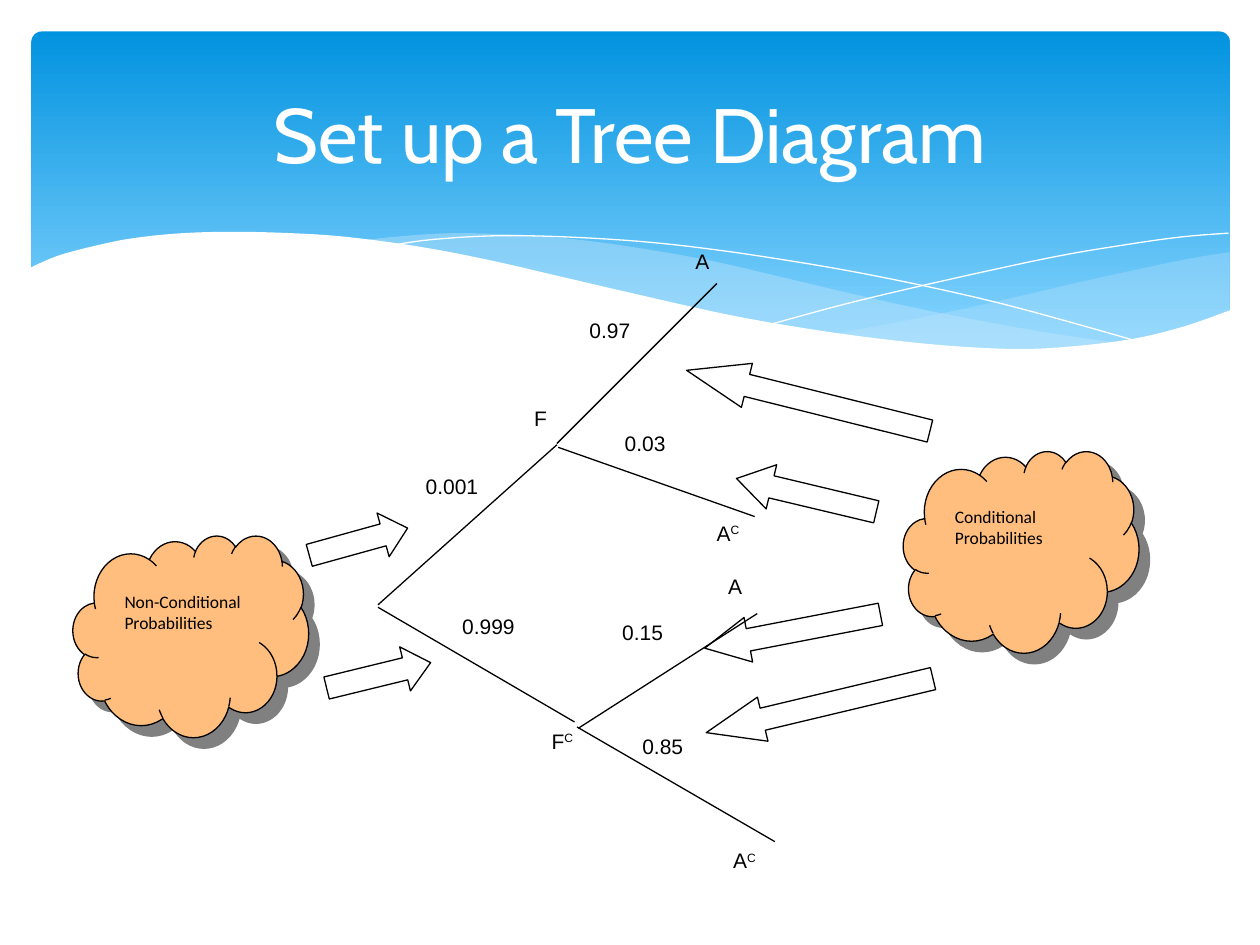
import pptx
import pptx.util
import pptx.dml.color
import pptx.enum.shapes
import pptx.enum.text
import pptx.oxml
import pptx.oxml.ns

Inches, Pt = pptx.util.Inches, pptx.util.Pt
SHAPE = pptx.enum.shapes.MSO_SHAPE
DRAWING_NS = pptx.oxml.ns.nsdecls("a")

THEME = {
    "sky": "0293E0", "pale_sky": "83D3FE", "mist": "C6E7FC", "white": "FFFFFF",
    "ink": "000000", "cloud": "FFBE7D", "shadow": "808080",
    "title_font": "Cabin", "label_font": "Arial", "cloud_font": "Calibri",
    "title_size": 44, "label_size": 12, "cloud_size": 10, "line": 0.75,
}

# Content
TITLE = "Set up a Tree Diagram"

# Waves: a smooth curve through points, each with its style
RIGHT_WAVE = [
    [(9.76, 2), (9.35, 2.07), (8.61, 2.23), (7.79, 2.42), (7.06, 2.57), (6.61, 2.65)],
    [(6.61, 2.65), (7.05, 2.71), (7.57, 2.76), (8.03, 2.78), (8.54, 2.76),
     (9.05, 2.69), (9.42, 2.59), (9.76, 2.47)],
]
MIDDLE_WAVE = [
    [(8.93, 2.73), (8.37, 2.65), (7.75, 2.54), (7.06, 2.4), (6.29, 2.22), (5.69, 2.08),
     (5.14, 1.98), (4.65, 1.91), (4.2, 1.87), (3.61, 1.85), (3.13, 1.88), (2.86, 1.91)],
    [(2.86, 1.91), (3.42, 1.99), (4.04, 2.11), (4.49, 2.22), (5.3, 2.4), (6.01, 2.55),
     (6.65, 2.66), (7.22, 2.74), (7.73, 2.77), (8.18, 2.78), (8.57, 2.77), (8.93, 2.73)],
]
LONG_CREST = [[(3.09, 1.95), (3.44, 1.9), (4.01, 1.87), (4.69, 1.89), (5.33, 1.94),
               (6.08, 2.04), (6.95, 2.19), (7.95, 2.41), (9.07, 2.72)]]
RISING_CREST = [[(6.13, 2.57), (6.72, 2.41), (7.48, 2.23), (8.36, 2.04), (8.95, 1.94),
                 (9.38, 1.88), (9.75, 1.85)]]
WHITE_FRONT = [
    [(9.77, 2.46), (9.4, 2.59), (8.99, 2.69), (8.5, 2.75), (8.09, 2.77), (7.61, 2.75),
     (7.08, 2.7), (6.48, 2.62), (5.79, 2.5), (5.03, 2.33), (4.47, 2.2), (3.91, 2.07),
     (3.4, 1.97), (2.92, 1.9), (2.5, 1.86), (1.93, 1.84), (1.46, 1.85), (1.06, 1.89),
     (0.76, 1.95), (0.46, 2.03), (0.23, 2.13)],
    [(0.23, 3.29), (9.77, 3.29)],
]
WAVES = [  # curves, fill colour (None for a line only), opacity in percent
    (RIGHT_WAVE, "mist", 29),
    (MIDDLE_WAVE, "mist", 40),
    (LONG_CREST, None, 100),
    (RISING_CREST, None, 100),
    (WHITE_FRONT, "white", 100),
]

BRANCHES = [  # start, end
    ((3, 4.8), (4.42, 3.53)), ((3, 4.82), (4.56, 5.73)),
    ((4.42, 3.52), (5.69, 2.25)), ((4.43, 3.55), (5.99, 4.1)),
    ((4.59, 5.78), (6.01, 4.87)), ((4.58, 5.77), (6.15, 6.68)),
]
LABELS = [  # text, superscript, left, top, width
    ("F", "", 4.14, 3.17, 0.43), ("F", "C", 4.28, 5.73, 0.57),
    ("0.001", "", 3.28, 3.71, 0.85), ("0.999", "", 3.57, 4.82, 1.14),
    ("A", "", 5.42, 1.92, 0.43), ("A", "C", 5.59, 4.08, 0.57),
    ("0.97", "", 4.58, 2.47, 0.57), ("0.03", "", 4.86, 3.37, 0.57),
    ("A", "", 5.68, 4.5, 0.43), ("A", "C", 5.72, 6.68, 0.57),
    ("0.15", "", 4.84, 4.87, 0.57), ("0.85", "", 5, 5.77, 0.57),
]
CLOUDS = [  # paragraphs, left, top
    (["Non-Conditional Probabilities"], 0.58, 4.25),
    (["Conditional", "Probabilities"], 7.17, 3.58),
]
ARROWS = [  # left, top, length, rotation, head length / height
    (2.44, 4.12, 0.81, 344.5, 0.56), (2.58, 5.18, 0.85, 346.3, 0.58),
    (5.42, 3, 1.99, 194, 1.37), (5.58, 5.42, 1.85, 166.6, 1.28),
    (5.58, 4.83, 1.42, 169.1, 0.98), (5.83, 3.75, 1.14, 193.4, 0.79),
]


def rgb(name):
    return pptx.dml.color.RGBColor.from_string(THEME[name])


def paint(shape, fill, line=None, width=THEME["line"]):
    shape.shadow.inherit = False
    if fill:
        shape.fill.solid()
        shape.fill.fore_color.rgb = rgb(fill)
    else:
        shape.fill.background()
    if line:
        shape.line.color.rgb = rgb(line)
        shape.line.width = Pt(width)
    else:
        shape.line.fill.background()


def add_run(p, text, kind, color="ink"):
    r = p.add_run()
    r.text = text
    r.font.name = THEME[kind + "_font"]
    r.font.size = Pt(THEME[kind + "_size"])
    r.font.color.rgb = rgb(color)
    return r


def add_text_box(s, x, y, w, h):
    tf = s.shapes.add_textbox(Inches(x), Inches(y), Inches(w), Inches(h)).text_frame
    tf.word_wrap = True
    return tf


def smooth(points, steps=5):
    """Sample a Catmull-Rom curve through the points."""
    if len(points) < 3:
        return points
    padded = [points[0], *points, points[-1]]
    curve = [points[0]]
    for a, b, c, d in zip(padded, padded[1:], padded[2:], padded[3:]):
        for i in range(1, steps + 1):
            t = i / steps
            curve.append(tuple(
                q + t / 2 * (r - p + t * (2 * p - 5 * q + 4 * r - u + t * (3 * (q - r) + u - p)))
                for p, q, r, u in zip(a, b, c, d)))
    return curve


def add_wave(s, curves, fill, opacity):
    points = [(Inches(x), Inches(y)) for curve in curves for x, y in smooth(curve)]
    builder = s.shapes.build_freeform(*points[0])
    builder.add_line_segments(points[1:], close=fill is not None)
    wave = builder.convert_to_shape()
    paint(wave, fill, None if fill else "white", 0)
    if opacity < 100:
        color = wave._element.spPr.find(".//" + pptx.oxml.ns.qn("a:srgbClr"))
        color.append(pptx.oxml.parse_xml(f'<a:alpha {DRAWING_NS} val="{opacity * 1000}"/>'))


def add_cloud(s, paragraphs, x, y):
    cloud = s.shapes.add_shape(SHAPE.CLOUD, Inches(x), Inches(y), Inches(1.87), Inches(1.6))
    paint(cloud, "cloud", "ink")
    effects = cloud._element.spPr.find(pptx.oxml.ns.qn("a:effectLst"))
    effects.append(pptx.oxml.parse_xml(
        f'<a:outerShdw {DRAWING_NS} dist="{Pt(8.5)}" dir="2700000" algn="ctr" rotWithShape="0">'
        f'<a:srgbClr val="{THEME["shadow"]}"/></a:outerShdw>'))
    tf = add_text_box(s, x + 0.31, y + 0.39, 1.56, 1.09)
    for i, text in enumerate(paragraphs):
        p = tf.add_paragraph() if i else tf.paragraphs[0]
        add_run(p, text, "cloud")


def main():
    prs = pptx.Presentation()
    prs.slide_width, prs.slide_height = Inches(10), Inches(7.5)
    s = prs.slides.add_slide(prs.slide_layouts[5])

    # Sky banner and waves
    banner = s.shapes.add_shape(SHAPE.ROUNDED_RECTANGLE, Inches(0.25), Inches(0.25),
                                Inches(9.51), Inches(2.7))
    paint(banner, None)
    banner.adjustments[0] = 0.03
    banner.fill.gradient()
    banner.fill.gradient_angle = 270
    for stop, color, position in zip(banner.fill.gradient_stops, ("sky", "pale_sky"), (0, 0.9)):
        stop.color.rgb = rgb(color)
        stop.position = position
    for wave in WAVES:
        add_wave(s, *wave)

    # Clouds and their arrows
    for cloud in CLOUDS:
        add_cloud(s, *cloud)
    for x, y, length, rotation, head in ARROWS:
        arrow = s.shapes.add_shape(SHAPE.RIGHT_ARROW, Inches(x), Inches(y),
                                   Inches(length), Inches(0.36))
        paint(arrow, "white", "ink")
        arrow.adjustments[1] = head
        arrow.rotation = rotation

    # Tree branches and labels
    for start, end in BRANCHES:
        branch = s.shapes.add_connector(pptx.enum.shapes.MSO_CONNECTOR.STRAIGHT,
                                        *map(Inches, start + end))
        branch.line.color.rgb = rgb("ink")
        branch.line.width = Pt(THEME["line"])
        branch._element.spPr.append(pptx.oxml.parse_xml(f"<a:effectLst {DRAWING_NS}/>"))
    for text, superscript, x, y, w in LABELS:
        p = add_text_box(s, x, y, w, 0.55).paragraphs[0]
        add_run(p, text, "label")
        if superscript:
            r = add_run(p, superscript, "label")
            r._r.get_or_add_rPr().set("baseline", "30000")

    # Title, brought in front of the banner
    title = s.shapes.title
    title.left, title.top, title.width, title.height = map(Inches, (0.5, 0.37, 9, 1.37))
    title.text_frame.vertical_anchor = pptx.enum.text.MSO_ANCHOR.MIDDLE
    p = title.text_frame.paragraphs[0]
    p.alignment = pptx.enum.text.PP_ALIGN.CENTER
    add_run(p, TITLE, "title", "white")
    s.shapes._spTree.append(title._element)

    prs.save("out.pptx")


if __name__ == "__main__":
    main()
